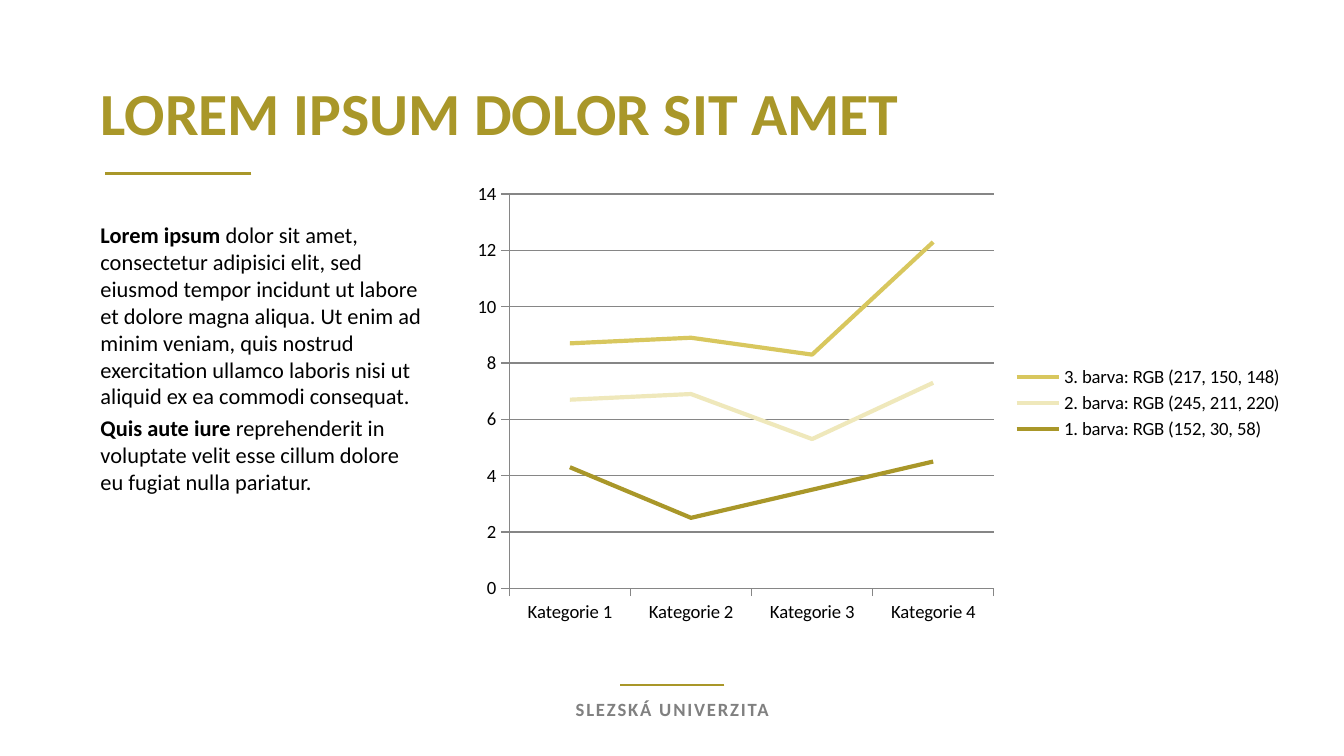
from dataclasses import dataclass

from lxml import etree
from pptx import Presentation
from pptx import util as u
from pptx.chart.data import CategoryChartData
from pptx.dml.color import RGBColor
from pptx.enum import chart as ch
from pptx.enum import shapes, text
from pptx.oxml.ns import qn


@dataclass(frozen=True)
class Theme:
    font: str = "Calibri"
    accent: str = "A99729"
    pale: str = "EFE8BB"
    medium: str = "D8C75E"
    ink: str = "000000"
    grey: str = "808080"
    axis: str = "868686"
    title: float = 32
    body: float = 12
    small: float = 10


theme = Theme()

TITLE = [[("LOREM IPSUM DOLOR SIT AMET", True)]]
BODY = [
    [("Lorem ipsum ", True),
     ("dolor sit amet, consectetur adipisici elit, sed eiusmod tempor "
      "incidunt ut labore et dolore magna aliqua. Ut enim ad minim veniam, "
      "quis nostrud exercitation ullamco laboris nisi ut aliquid ex ea "
      "commodi consequat.", False)],
    [("Quis aute iure ", True),
     ("reprehenderit in voluptate velit esse cillum dolore \n"
      "eu fugiat nulla pariatur.", False)],
]
FOOTER = [[("SLEZSKÁ UNIVERZITA", True)]]
CATEGORIES = ["Kategorie 1", "Kategorie 2", "Kategorie 3", "Kategorie 4"]
SERIES = [
    ("1. barva: RGB (152, 30, 58)", (4.3, 2.5, 3.5, 4.5), theme.accent),
    ("2. barva: RGB (245, 211, 220)", (2.4, 4.4, 1.8, 2.8), theme.pale),
    ("3. barva: RGB (217, 150, 148)", (2, 2, 3, 5), theme.medium),
]
RULES = [(4.75, 1.98, 3.28, 1.5), (13.69, 11.71, 12.95, 0.75)]


def rgb(value):
    return RGBColor.from_string(value)


def style_font(font, size, color):
    font.name = theme.font
    font.size = u.Pt(size)
    font.color.rgb = rgb(color)


def style_line(line, color, width):
    line.color.rgb = rgb(color)
    line.width = u.Pt(width)


def add_text(page, place, paragraphs, size, color, wrap=True, spacing=0):
    box = page.shapes.add_textbox(*map(u.Cm, place))
    frame = box.text_frame
    frame.word_wrap = wrap
    for index, spans in enumerate(paragraphs):
        para = frame.paragraphs[0] if index == 0 else frame.add_paragraph()
        if index:
            para.space_before = u.Pt(size * 0.2)
        for words, bold in spans:
            for part, line in enumerate(words.split("\n")):
                if part:
                    para.add_line_break()
                span = para.add_run()
                span.text = line
                style_font(span.font, size, color)
                span.font.bold = bold
                if spacing:
                    span.font._element.set("spc", str(spacing))
    return frame


def add_rule(page, start, end, height, width):
    rule = page.shapes.add_connector(
        shapes.MSO_CONNECTOR.STRAIGHT,
        u.Cm(start), u.Cm(height), u.Cm(end), u.Cm(height))
    style_line(rule.line, theme.accent, width)
    etree.SubElement(rule._element.spPr, qn("a:effectLst"))


def add_line_chart(page, place):
    data = CategoryChartData()
    data.categories = CATEGORIES
    for name, values, _ in SERIES:
        data.add_series(name, values)
    chart = page.shapes.add_chart(
        ch.XL_CHART_TYPE.LINE_STACKED, *map(u.Cm, place), data).chart
    chart.has_title = False
    style_font(chart.font, theme.small, theme.ink)
    chart.has_legend = True
    chart.legend.position = ch.XL_LEGEND_POSITION.RIGHT
    chart.legend.include_in_layout = False
    style_font(chart.legend.font, theme.small, theme.ink)
    chart.plots[0].vary_by_categories = False
    for series, (_, _, color) in zip(chart.plots[0].series, SERIES):
        series.smooth = False
        style_line(series.format.line, color, 2.25)
    for axis in (chart.category_axis, chart.value_axis):
        axis.major_tick_mark = ch.XL_TICK_MARK.OUTSIDE
        axis.minor_tick_mark = ch.XL_TICK_MARK.NONE
        style_font(axis.tick_labels.font, theme.small, theme.ink)
        style_line(axis.format.line, theme.axis, 0.75)
    scale = chart.value_axis
    scale.minimum_scale, scale.maximum_scale, scale.major_unit = 0, 14, 2
    scale.has_major_gridlines = True
    style_line(scale.major_gridlines.format.line, theme.axis, 0.75)


def main():
    deck = Presentation()
    deck.slide_width, deck.slide_height = u.Cm(25.4), u.Cm(14.29)
    page = deck.slides.add_slide(deck.slide_layouts[6])
    add_text(page, (1.65, 1.3, 17.45, 1.85), TITLE, theme.title, theme.accent)
    add_text(page, (1.65, 4.06, 6.83, 6.68), BODY, theme.body, theme.ink)
    add_line_chart(page, (8.71, 3.3, 15.8, 8.64))
    for rule in RULES:
        start, end, height, width = rule
        add_rule(page, start, end, height, width)
    footer = add_text(page, (10.57, 13.06, 4.27, 0.69), FOOTER,
                      theme.small, theme.grey, wrap=False, spacing=100)
    footer.auto_size = text.MSO_AUTO_SIZE.SHAPE_TO_FIT_TEXT
    footer.paragraphs[0].alignment = text.PP_ALIGN.CENTER
    deck.save("out.pptx")


if __name__ == "__main__":
    main()
